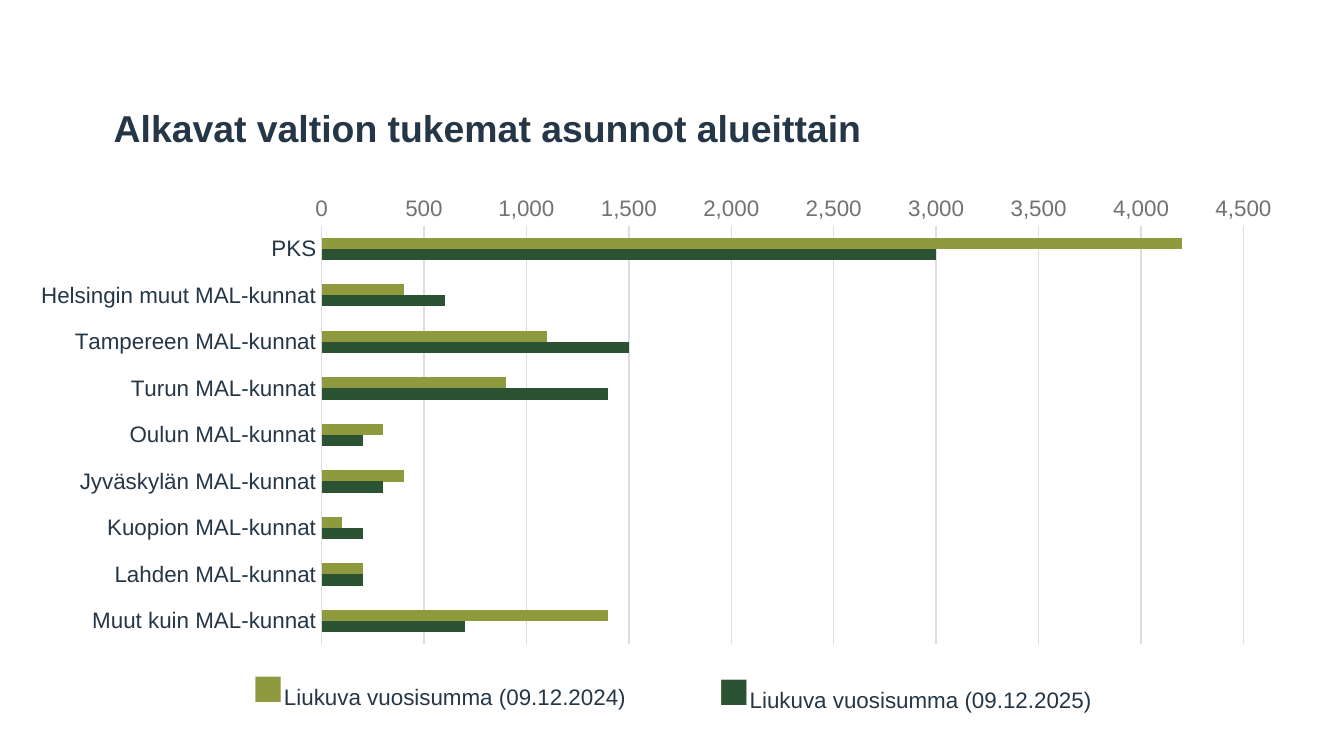
from dataclasses import dataclass

from lxml.etree import SubElement
from pptx import Presentation
from pptx.chart.data import CategoryChartData
from pptx.dml.color import RGBColor
from pptx.enum.chart import XL_CHART_TYPE, XL_TICK_MARK
from pptx.enum.text import MSO_ANCHOR, PP_ALIGN
from pptx.oxml.ns import qn
from pptx.util import Cm, Pt

NAVY, GREY, RULE = "253746", "727272", "DEDEDE"
REGIONS = [
    "PKS", "Helsingin muut MAL-kunnat", "Tampereen MAL-kunnat",
    "Turun MAL-kunnat", "Oulun MAL-kunnat", "Jyväskylän MAL-kunnat",
    "Kuopion MAL-kunnat", "Lahden MAL-kunnat", "Muut kuin MAL-kunnat",
]
PLOT_LAYOUT = {"x": 0.24, "y": 0.08, "w": 0.72, "h": 0.9}


@dataclass
class Span:
    text: str
    size: float
    colour: str
    bold: bool = False


@dataclass
class Period:
    name: str
    colour: str
    values: tuple
    key_frame: tuple


PERIODS = [
    Period("Liukuva vuosisumma (09.12.2024)", "8F993E",
           (4200, 400, 1100, 900, 300, 400, 100, 200, 1400),
           (3.71, 12.34, 9.19, 1.19)),
    Period("Liukuva vuosisumma (09.12.2025)", "2C5234",
           (3000, 600, 1500, 1400, 200, 300, 200, 200, 700),
           (13.31, 12.4, 7.59, 1.19)),
]


def rgb(code: str) -> RGBColor:
    return RGBColor.from_string(code)


def apply_format(target, values: dict) -> None:
    for name, value in values.items():
        setattr(target, name, value)


def set_font(font, size: float, colour: str, bold: bool = False) -> None:
    apply_format(font, {"name": "Arial", "size": Pt(size), "bold": bold})
    font.color.rgb = rgb(colour)


def set_line(line, colour: str) -> None:
    line.color.rgb = rgb(colour)
    line.width = Pt(0.75)


def add_text(page, frame: tuple, spans: list[Span], align=PP_ALIGN.LEFT) -> None:
    box = page.shapes.add_textbox(*map(Cm, frame))
    apply_format(box.text_frame, {
        "word_wrap": True, "vertical_anchor": MSO_ANCHOR.MIDDLE})
    para = box.text_frame.paragraphs[0]
    para.alignment = align
    for span in spans:
        run = para.add_run()
        run.text = span.text
        set_font(run.font, span.size, span.colour, span.bold)


def set_plot_layout(chart) -> None:
    plot_area = chart.plots[0]._element.getparent()
    layout = plot_area.find(qn("c:layout"))
    if layout is None:
        layout = SubElement(plot_area, qn("c:layout"))
        plot_area.insert(0, layout)
    manual = SubElement(layout, qn("c:manualLayout"))
    settings = {"layoutTarget": "inner", "xMode": "edge", "yMode": "edge"}
    for name, value in (settings | PLOT_LAYOUT).items():
        SubElement(manual, qn(f"c:{name}")).set("val", str(value))


def add_housing_chart(page) -> None:
    data = CategoryChartData(number_format="#,##0")
    data.categories = REGIONS
    for period in PERIODS:
        data.add_series(period.name, period.values)
    chart = page.shapes.add_chart(
        XL_CHART_TYPE.BAR_CLUSTERED,
        *map(Cm, (0.27, 3.56, 24.2, 8.79)), data).chart
    apply_format(chart, {"has_legend": False, "has_title": False})
    set_font(chart.font, 12, NAVY)
    plot = chart.plots[0]
    apply_format(plot, {"gap_width": 219, "overlap": 1, "vary_by_categories": False})
    for series, period in zip(plot.series, PERIODS):
        series.format.fill.solid()
        series.format.fill.fore_color.rgb = rgb(period.colour)

    regions, amounts = chart.category_axis, chart.value_axis
    for axis, colour in ((regions, NAVY), (amounts, GREY)):
        apply_format(axis, {"major_tick_mark": XL_TICK_MARK.NONE,
                            "minor_tick_mark": XL_TICK_MARK.NONE})
        set_font(axis.tick_labels.font, 12, colour)
    regions.reverse_order = True
    set_line(regions.format.line, RULE)
    apply_format(amounts, {"minimum_scale": 0, "maximum_scale": 4500,
                           "major_unit": 500, "has_major_gridlines": True})
    apply_format(amounts.tick_labels, {
        "number_format": "#,##0", "number_format_is_linked": False})
    amounts.format.line.fill.background()
    set_line(amounts.major_gridlines.format.line, RULE)
    set_plot_layout(chart)


def main() -> None:
    """Build the slide on state-supported housing starts by region."""
    deck = Presentation()
    apply_format(deck, {"slide_width": Cm(25.4), "slide_height": Cm(14.28)})
    page = deck.slides.add_slide(deck.slide_layouts[6])
    add_housing_chart(page)
    add_text(page, (1.9, 1.92, 23.29, 0.97),
             [Span("Alkavat valtion tukemat asunnot alueittain", 20, NAVY, True)])
    for period in PERIODS:
        add_text(page, period.key_frame,
                 [Span("■", 28, period.colour), Span(period.name, 12, NAVY)],
                 PP_ALIGN.CENTER)
    deck.save("out.pptx")


if __name__ == "__main__":
    main()
